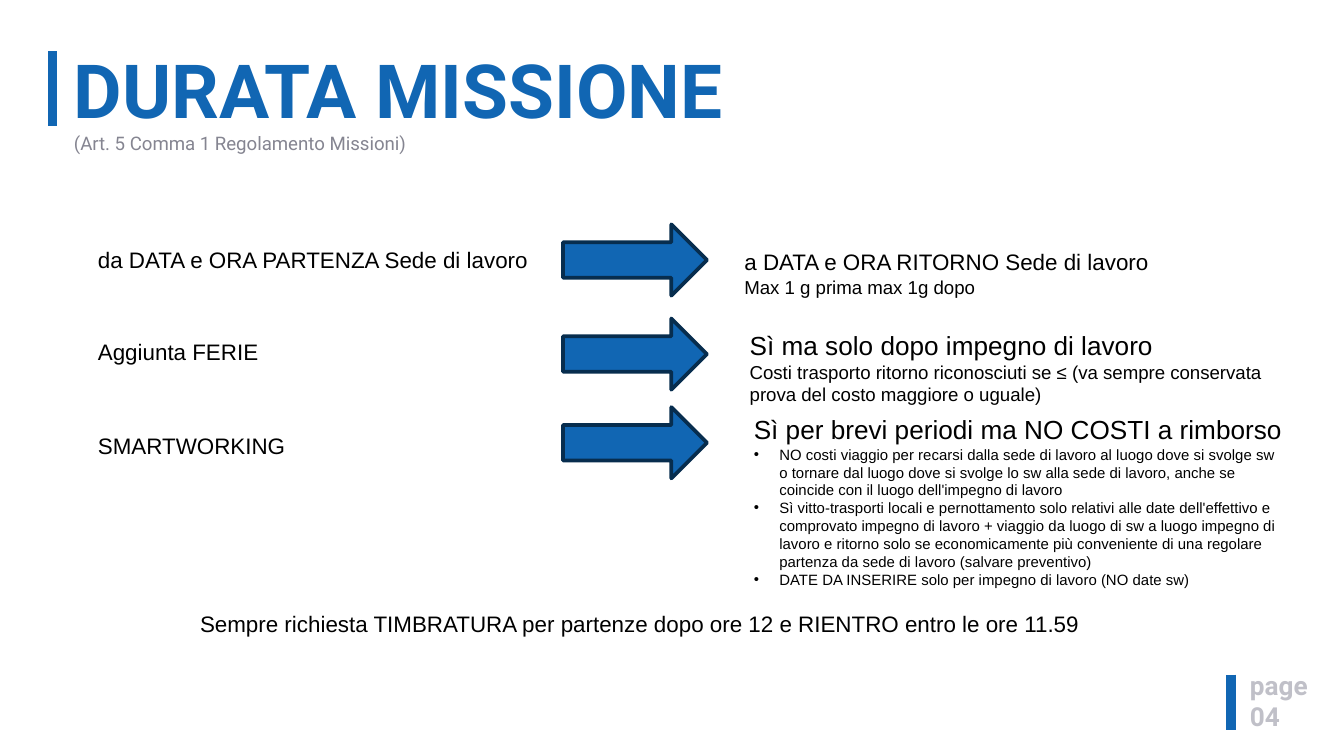
from lxml.etree import SubElement
from pptx import Presentation
from pptx.dml.color import RGBColor
from pptx.enum.shapes import MSO_CONNECTOR, MSO_SHAPE
from pptx.enum.text import MSO_ANCHOR, PP_ALIGN
from pptx.oxml.ns import qn
from pptx.util import Inches, Pt

COLORS = {
    "blue": "1166B3",
    "navy": "072D4E",
    "black": "000000",
    "gray": "858591",
    "light": "C0C0C8",
}
SLIDE_WIDTH = 10
NARROW_INSETS = (0.05, 0.02)
ARROW_TOPS = (1.67, 2.37, 3.03)
LEFT_TOPICS = (
    ("da DATA e ORA PARTENZA Sede di lavoro", 1.78),
    ("Aggiunta FERIE", 2.47),
    ("SMARTWORKING", 3.17),
)
SMARTWORKING_RULES = (
    "NO costi viaggio per recarsi dalla sede di lavoro al luogo dove si svolge sw "
    "o tornare dal luogo dove si svolge lo sw alla sede di lavoro, anche se "
    "coincide con il luogo dell'impegno di lavoro",
    "Sì vitto-trasporti locali e pernottamento solo relativi alle date "
    "dell'effettivo e comprovato impegno di lavoro + viaggio da luogo di sw a "
    "luogo impegno di lavoro e ritorno solo se economicamente più conveniente di "
    "una regolare partenza da sede di lavoro (salvare preventivo)",
    "DATE DA INSERIRE solo per impegno di lavoro (NO date sw)",
)


def rgb(name):
    return RGBColor.from_string(COLORS[name])


def add_run(paragraph, text, size=12, font="Arial", color="black", bold=False):
    run = paragraph.add_run()
    run.text = text
    run.font.size = Pt(size)
    run.font.name = font
    run.font.bold = bold
    run.font.color.rgb = rgb(color)


def set_bullet(paragraph):
    properties = paragraph._p.get_or_add_pPr()
    properties.set("marL", str(Inches(0.19)))
    properties.set("indent", str(Inches(-0.19)))
    bullet_color = SubElement(properties, qn("a:buClr"))
    SubElement(bullet_color, qn("a:srgbClr"), val=COLORS["black"])
    SubElement(properties, qn("a:buFont"), typeface="Arial")
    SubElement(properties, qn("a:buChar"), char="•")


def set_frame(frame, insets):
    frame.word_wrap = True
    frame.vertical_anchor = MSO_ANCHOR.TOP
    frame.margin_left = frame.margin_right = Inches(insets[0])
    frame.margin_top = frame.margin_bottom = Inches(insets[1])


def add_text(slide, lines, left, top, width, height, insets=(0.1, 0.05)):
    """Add a text box; each line is its text and a dict of run formats."""
    box = slide.shapes.add_textbox(
        Inches(left), Inches(top), Inches(width), Inches(height))
    frame = box.text_frame
    set_frame(frame, insets)
    for index, (text, formats) in enumerate(lines):
        paragraph = frame.add_paragraph() if index else frame.paragraphs[0]
        formats = dict(formats)
        if formats.pop("bullet", False):
            set_bullet(paragraph)
        add_run(paragraph, text, **formats)


def add_accent_bar(slide, x, top, bottom):
    bar = slide.shapes.add_connector(
        MSO_CONNECTOR.STRAIGHT, Inches(x), Inches(top), Inches(x), Inches(bottom))
    bar.line.color.rgb = rgb("blue")
    bar.line.width = Pt(5)
    SubElement(bar._element.spPr, qn("a:effectLst"))


def add_arrow(slide, top):
    arrow = slide.shapes.add_shape(
        MSO_SHAPE.RIGHT_ARROW, Inches(4.19), Inches(top), Inches(1.07), Inches(0.53))
    arrow.shadow.inherit = False
    arrow.fill.solid()
    arrow.fill.fore_color.rgb = rgb("blue")
    arrow.line.color.rgb = rgb("navy")
    arrow.line.width = Pt(2)
    SubElement(arrow.line._get_or_add_ln(), qn("a:round"))


def format_title(slide):
    title = slide.shapes.title
    title.left, title.top = Inches(0.5), Inches(0.38)
    title.width, title.height = Inches(8.04), Inches(0.81)
    set_frame(title.text_frame, NARROW_INSETS)
    paragraph = title.text_frame.paragraphs[0]
    paragraph.alignment = PP_ALIGN.LEFT
    paragraph.line_spacing = 0.9
    add_run(paragraph, "DURATA MISSIONE", size=40, font="Roboto", color="blue", bold=True)
    paragraph.add_line_break()
    add_run(paragraph, "(Art. 5 Comma 1 Regolamento Missioni)",
            size=10, font="Roboto", color="gray")


def main():
    presentation = Presentation()
    presentation.slide_width = Inches(SLIDE_WIDTH)
    presentation.slide_height = Inches(SLIDE_WIDTH * 9 / 16)
    slide = presentation.slides.add_slide(presentation.slide_layouts[5])

    add_accent_bar(slide, 0.39, 0.38, 0.94)
    add_accent_bar(slide, 9.16, 5.02, 5.43)
    format_title(slide)
    page_format = {"size": 14, "font": "Roboto", "color": "light", "bold": True}
    add_text(slide, [("page", page_format), ("04", page_format)],
             9.25, 4.96, 0.95, 0.52, insets=NARROW_INSETS)

    for topic, top in LEFT_TOPICS:
        add_text(slide, [(topic, {})], 0.63, top, 3.51, 0.3)
    for top in ARROW_TOPS:
        add_arrow(slide, top)

    add_text(slide, [
        ("a DATA e ORA RITORNO Sede di lavoro", {}),
        ("Max 1 g prima max 1g dopo", {"size": 10}),
    ], 5.44, 1.8, 3.49, 0.67)
    add_text(slide, [
        ("Sì ma solo dopo impegno di lavoro", {"size": 14}),
        ("Costi trasporto ritorno riconosciuti se ≤ (va sempre conservata "
         "prova del costo maggiore o uguale)", {"size": 10}),
    ], 5.48, 2.4, 4.17, 0.67)
    add_text(slide, [
        ("Sì per brevi periodi ma NO COSTI a rimborso", {"size": 14}),
        *((rule, {"size": 8, "bullet": True}) for rule in SMARTWORKING_RULES),
    ], 5.51, 3.03, 4.15, 1.41)
    add_text(slide, [
        ("Sempre richiesta TIMBRATURA per partenze dopo ore 12 e RIENTRO "
         "entro le ore 11.59", {}),
    ], 1.39, 4.49, 7.06, 0.3)

    presentation.save("out.pptx")


if __name__ == "__main__":
    main()
